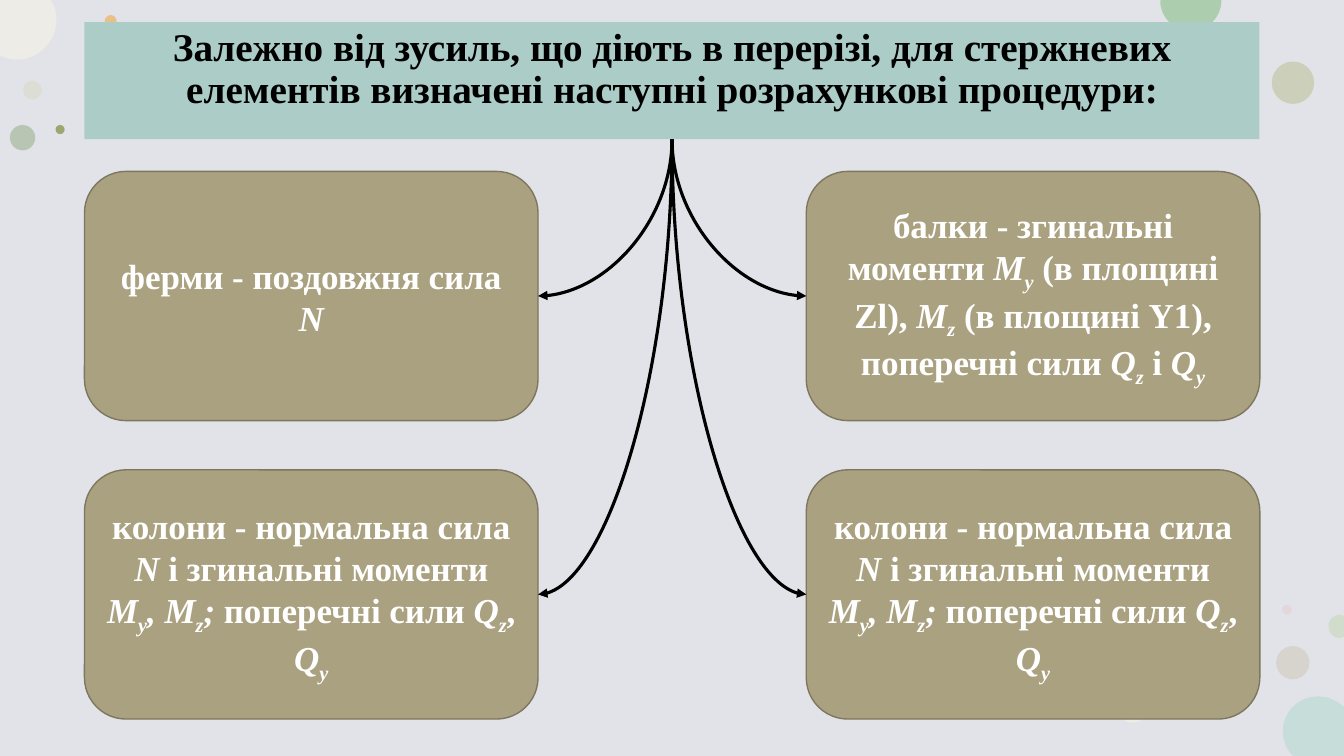
import pptx
import pptx.dml.color
import pptx.enum.shapes
import pptx.enum.text
import pptx.oxml
import pptx.oxml.ns
import pptx.util
from pptx.util import Cm

COLORS = {
    "background": "E2E3E8", "banner": "ACCCC7", "box": "AAA180",
    "box_edge": "7E775F", "black": "000000", "white": "FFFFFF",
    "mint": "C7DDDA", "cream": "EEECE6", "green": "ADCEAE", "sage": "D2DCCC",
    "pale_olive": "D7DBC6", "orange": "F39E29", "sand": "CCC7B3",
    "moss": "8FA880", "khaki": "C4CAAA", "pink": "E3BEBE", "olive": "9CA671",
}
FONT = "Times New Roman"
SHAPES = pptx.enum.shapes.MSO_SHAPE
CENTER = pptx.enum.text.PP_ALIGN.CENTER
SLIDE_W, SLIDE_H = 33.87, 19.05


def rgb(name):
    return pptx.dml.color.RGBColor.from_string(COLORS[name])


def paint(shape, color, opacity=100):
    shape.shadow.inherit = False
    shape.fill.solid()
    shape.fill.fore_color.rgb = rgb(color)
    shape.line.fill.background()
    if opacity < 100:
        tint = shape.fill._xPr.find(".//" + pptx.oxml.ns.qn("a:srgbClr"))
        alpha = pptx.oxml.parse_xml(f'<a:alpha {pptx.oxml.ns.nsdecls("a")} val="{opacity * 1000}"/>')
        tint.append(alpha)


presentation = pptx.Presentation()
presentation.slide_width, presentation.slide_height = Cm(SLIDE_W), Cm(SLIDE_H)
slide = presentation.slides.add_slide(presentation.slide_layouts[6])

# Backdrop
backdrop = slide.shapes.add_shape(SHAPES.RECTANGLE, 0, 0, Cm(SLIDE_W), Cm(SLIDE_H))
paint(backdrop, "background")

# Whole bubbles: left, top, diameter, colour, opacity
bubbles = [
    (0.58, 2.03, 0.48, "pale_olive", 50),
    (2.64, 0.38, 0.3, "orange", 50),
    (32.16, 16.28, 0.84, "sand", 50),
    (0.25, 3.15, 0.64, "moss", 50),
    (32.05, 1.55, 1.07, "khaki", 72),
    (32.31, 15.24, 0.25, "pink", 28),
    (28.12, 17.37, 0.84, "cream", 100),
    (1.4, 3.15, 0.23, "olive", 100),
]
for left, top, diameter, color, opacity in bubbles:
    bubble = slide.shapes.add_shape(SHAPES.OVAL, Cm(left), Cm(top), Cm(diameter), Cm(diameter))
    paint(bubble, color, opacity)

# Bubbles cut off by the slide edge: colour, start, then segments;
# one point makes a straight segment, three points make a curve
edge_bubbles = [
    ("mint", (33.22, 17.55), [
        [(33.47, 17.55), (33.68, 17.65), (33.87, 17.81)],
        [(33.87, 19.05)], [(32.59, 19.05)], [(32.54, 19)],
        [(32.41, 18.85), (32.33, 18.64), (32.33, 18.44)],
        [(32.33, 17.93), (32.72, 17.55), (33.22, 17.55)]]),
    ("cream", (0, 0), [
        [(1.27, 0)], [(1.35, 0.13)],
        [(1.4, 0.23), (1.42, 0.36), (1.42, 0.51)],
        [(1.42, 1.04), (0.97, 1.5), (0.43, 1.5)],
        [(0.28, 1.5), (0.15, 1.47), (0.05, 1.42)], [(0, 1.4)]]),
    ("green", (29.26, 0), [
        [(30.78, 0)], [(30.78, 0.03)],
        [(30.78, 0.43), (30.43, 0.79), (30.02, 0.79)],
        [(29.59, 0.79), (29.24, 0.43), (29.24, 0.03)]]),
    ("sage", (33.76, 15.49), [
        [(33.87, 15.52)], [(33.87, 16.05)], [(33.76, 16.08)],
        [(33.6, 16.08), (33.48, 15.95), (33.48, 15.77)],
        [(33.48, 15.62), (33.6, 15.49), (33.76, 15.49)]]),
]
for color, (start_x, start_y), segments in edge_bubbles:
    outline = slide.shapes.build_freeform(Cm(start_x), Cm(start_y))
    outline.add_line_segments([(Cm(x), Cm(y)) for points in segments for x, y in points], close=True)
    edge_bubble = outline.convert_to_shape()
    paint(edge_bubble, color)
    steps = iter(edge_bubble._element.findall(".//" + pptx.oxml.ns.qn("a:lnTo")))
    for points in segments:
        parts = [next(steps) for _ in points]
        if len(parts) == 3:
            curve = pptx.oxml.parse_xml(f'<a:cubicBezTo {pptx.oxml.ns.nsdecls("a")}/>')
            parts[0].addprevious(curve)
            for part in parts:
                curve.append(part[0])
                part.getparent().remove(part)

# Heading banner
banner = slide.shapes.add_shape(SHAPES.RECTANGLE, Cm(2.13), Cm(0.56), Cm(29.61), Cm(2.95))
paint(banner, "banner")
banner.text_frame.word_wrap = True
banner.text_frame.vertical_anchor = pptx.enum.text.MSO_ANCHOR.TOP
heading = banner.text_frame.paragraphs[0]
heading.text = ("Залежно від зусиль, що діють в перерізі, для стержневих "
                "елементів визначені наступні розрахункові процедури:")
heading.alignment = CENTER
heading.line_spacing = 0.9
heading.font.name, heading.font.size, heading.font.bold = FONT, pptx.util.Pt(28), True
heading.font.color.rgb = rgb("black")

# Element boxes: runs are (text, style), "i" italic, "sub" italic subscript
truss = [("ферми - поздовжня сила ", ""), ("N", "i")]
beam = [
    ("балки - згинальні моменти ", ""), ("М", "i"), ("у", "sub"),
    (" (в площині Zl), ", ""), ("M", "i"), ("z", "sub"),
    (" (в площині Y1), поперечні сили ", ""), ("Q", "i"), ("z", "sub"),
    (" і ", ""), ("Q", "i"), ("y", "sub"),
]
column = [
    ("колони - нормальна сила ", ""), ("N", "i"), (" і згинальні моменти ", ""),
    ("M", "i"), ("y", "sub"), (", M", "i"), ("z", "sub"), (";", "i"),
    (" поперечні сили ", ""), ("Q", "i"), ("z", "sub"), (", ", ""),
    ("Q", "i"), ("y", "sub"),
]
BOX_W, BOX_H = 11.43, 6.28
LEFT_X, RIGHT_X = 2.13, 20.32
UPPER_Y, LOWER_Y = 4.32, 11.84
element_boxes = [
    (LEFT_X, UPPER_Y, truss), (LEFT_X, LOWER_Y, column),
    (RIGHT_X, UPPER_Y, beam), (RIGHT_X, LOWER_Y, column),
]
for left, top, wording in element_boxes:
    box = slide.shapes.add_shape(SHAPES.ROUNDED_RECTANGLE, Cm(left), Cm(top), Cm(BOX_W), Cm(BOX_H))
    paint(box, "box")
    box.line.color.rgb = rgb("box_edge")
    box.line.width = pptx.util.Pt(1)
    box.text_frame.word_wrap = True
    box.text_frame.vertical_anchor = pptx.enum.text.MSO_ANCHOR.MIDDLE
    description = box.text_frame.paragraphs[0]
    description.alignment = CENTER
    description.font.name, description.font.size = FONT, pptx.util.Pt(25)
    description.font.bold = True
    description.font.color.rgb = rgb("white")
    for text, style in wording:
        run = description.add_run()
        run.text = text
        if style:
            run.font.italic = True
        if style == "sub":
            run._r.get_or_add_rPr().set("baseline", "-25000")

# Curved arrows from the banner to the inner side of each box
hub_x, hub_y = SLIDE_W / 2, 3.51
for left, top, _ in element_boxes:
    to_left = left == LEFT_X
    end_x = left + BOX_W if to_left else left
    end_y = top + BOX_H / 2
    # The arrow lies on its side, so its width is the vertical distance
    length, depth = end_y - hub_y, abs(end_x - hub_x)
    x = (hub_x + end_x - length) / 2
    y = (hub_y + end_y - depth) / 2
    arrow = slide.shapes.add_connector(
        pptx.enum.shapes.MSO_CONNECTOR.CURVE, Cm(x), Cm(y), Cm(x + length), Cm(y + depth))
    arrow.line.color.rgb = rgb("black")
    arrow.line.width = pptx.util.Pt(2.25)
    properties = arrow._element.spPr
    turn = properties.find(pptx.oxml.ns.qn("a:xfrm"))
    turn.set("rot", str((90 if to_left else 270) * 60000))
    if not to_left:
        turn.set("flipH", "1")
    properties.find(pptx.oxml.ns.qn("a:prstGeom")).set("prst", "curvedConnector2")
    head = pptx.oxml.parse_xml(f'<a:tailEnd {pptx.oxml.ns.nsdecls("a")} type="triangle"/>')
    properties.find(pptx.oxml.ns.qn("a:ln")).append(head)
    properties.append(pptx.oxml.parse_xml(f'<a:effectLst {pptx.oxml.ns.nsdecls("a")}/>'))

presentation.save("out.pptx")
